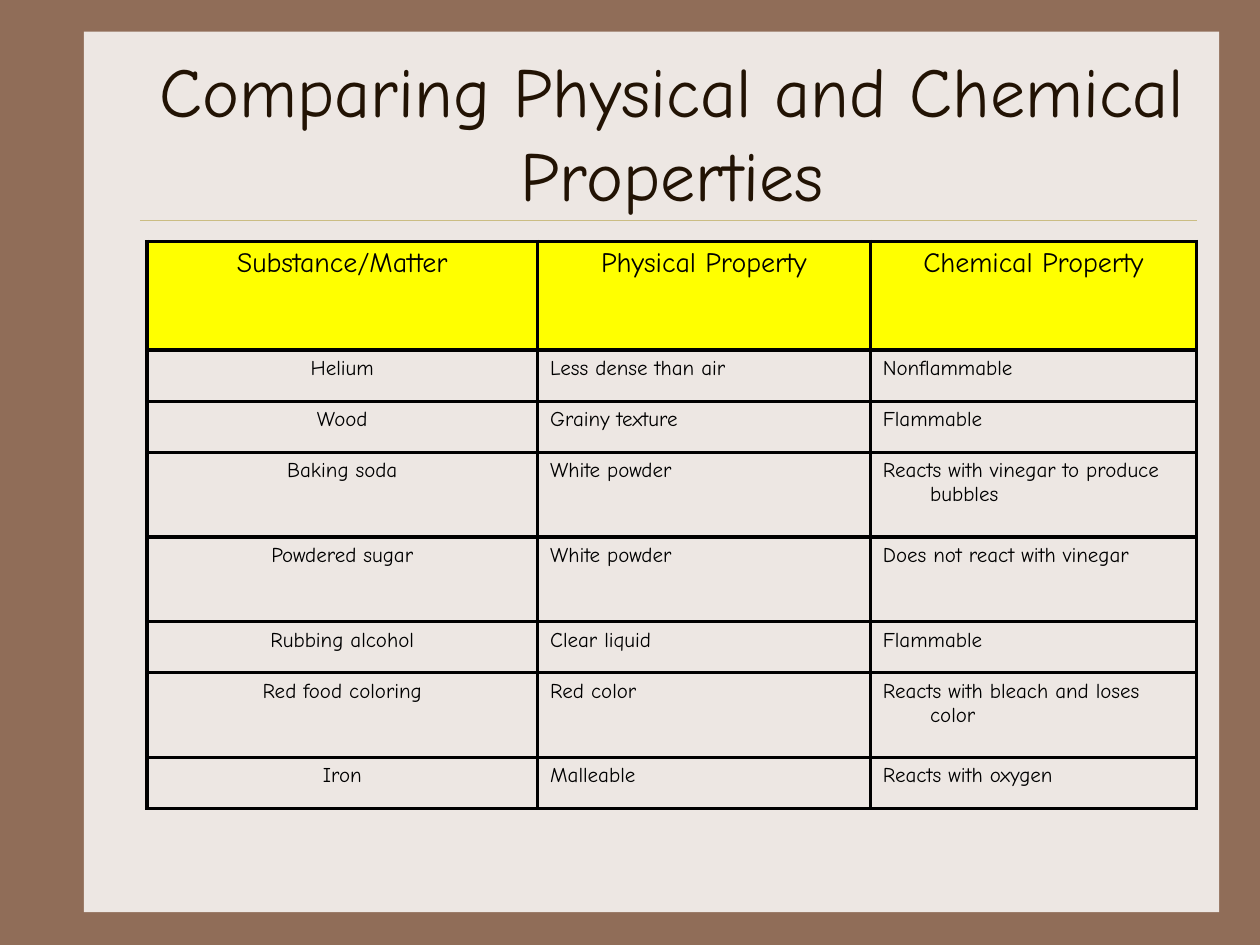
from dataclasses import dataclass

from lxml.etree import SubElement
from pptx import Presentation
from pptx.dml.color import RGBColor
from pptx.enum.shapes import MSO_CONNECTOR, MSO_SHAPE
from pptx.enum.text import MSO_ANCHOR, PP_ALIGN
from pptx.oxml.ns import qn
from pptx.slide import Slide
from pptx.util import Pt

COLORS = {
    "frame": "906D58",
    "paper": "EDE7E3",
    "rule": "CBBD83",
    "title": "221304",
    "ink": "000000",
    "header": "FFFF00",
}
COLUMN_WIDTHS = [223.2, 190.1, 186.5]
ROW_HEIGHTS = [62, 29.2, 29.2, 48.5, 48.5, 29.2, 48.5, 29.2]
PROPERTIES = [
    ("Substance/Matter", "Physical Property", "Chemical Property"),
    ("Helium", "Less dense than air", "Nonflammable"),
    ("Wood", "Grainy texture", "Flammable"),
    ("Baking soda", "White powder", "Reacts with vinegar to produce bubbles"),
    ("Powdered sugar", "White powder", "Does not react with vinegar"),
    ("Rubbing alcohol", "Clear liquid", "Flammable"),
    ("Red food coloring", "Red color", "Reacts with bleach and loses color"),
    ("Iron", "Malleable", "Reacts with oxygen"),
]


def write_text(text_frame, text, *, font, size, color, align=PP_ALIGN.LEFT, hanging=0):
    paragraph = text_frame.paragraphs[0]
    paragraph.alignment = align
    if hanging:
        properties = paragraph._p.get_or_add_pPr()
        properties.set("marL", str(Pt(hanging)))
        properties.set("indent", str(-Pt(hanging)))
    run = paragraph.add_run()
    run.text = text
    run.font.name = font
    run.font.size = Pt(size)
    run.font.color.rgb = RGBColor.from_string(color)


def add_borders(cell, color, width):
    properties = cell._tc.get_or_add_tcPr()
    for position, side in enumerate(("a:lnL", "a:lnR", "a:lnT", "a:lnB")):
        line = SubElement(properties, qn(side), w=str(Pt(width)))
        fill = SubElement(line, qn("a:solidFill"))
        SubElement(fill, qn("a:srgbClr"), val=color)
        properties.insert(position, line)


@dataclass
class SlideBuilder:
    slide: Slide
    font: str = "Comic Neue"
    title_size: float = 40
    header_size: float = 16
    body_size: float = 12
    hanging: float = 27
    border_width: float = 2

    def background(self, color):
        fill = self.slide.background.fill
        fill.solid()
        fill.fore_color.rgb = RGBColor.from_string(color)

    def panel(self, left, top, width, height, color):
        shape = self.slide.shapes.add_shape(
            MSO_SHAPE.RECTANGLE, Pt(left), Pt(top), Pt(width), Pt(height)
        )
        shape.shadow.inherit = False
        shape.fill.solid()
        shape.fill.fore_color.rgb = RGBColor.from_string(color)
        shape.line.fill.background()

    def rule(self, left, right, top, color):
        connector = self.slide.shapes.add_connector(
            MSO_CONNECTOR.STRAIGHT, Pt(left), Pt(top), Pt(right), Pt(top)
        )
        connector.line.color.rgb = RGBColor.from_string(color)
        connector.line.width = Pt(0.25)
        SubElement(connector._element.spPr, qn("a:effectLst"))

    def title(self, left, top, width, height, text):
        shape = self.slide.shapes.add_textbox(Pt(left), Pt(top), Pt(width), Pt(height))
        text_frame = shape.text_frame
        text_frame.word_wrap = True
        text_frame.vertical_anchor = MSO_ANCHOR.MIDDLE
        write_text(text_frame, text, font=self.font, size=self.title_size,
                   color=COLORS["title"], align=PP_ALIGN.CENTER)

    def table(self, left, top, widths, heights, rows):
        table = self.slide.shapes.add_table(
            len(rows), len(widths), Pt(left), Pt(top), Pt(sum(widths)), Pt(sum(heights))
        ).table
        table.first_row = False
        table.horz_banding = False
        for column, width in zip(table.columns, widths):
            column.width = Pt(width)
        for row, height in zip(table.rows, heights):
            row.height = Pt(height)
        for row_index, texts in enumerate(rows):
            for column_index, text in enumerate(texts):
                self.cell(table.cell(row_index, column_index), text,
                          is_header=row_index == 0, is_first=column_index == 0)

    def cell(self, cell, text, is_header, is_first):
        if is_header:
            cell.fill.solid()
            cell.fill.fore_color.rgb = RGBColor.from_string(COLORS["header"])
        else:
            cell.fill.background()
        add_borders(cell, COLORS["ink"], self.border_width)
        write_text(
            cell.text_frame, text, font=self.font, color=COLORS["ink"],
            size=self.header_size if is_header else self.body_size,
            align=PP_ALIGN.CENTER if is_header or is_first else PP_ALIGN.LEFT,
            hanging=self.hanging,
        )


def main():
    presentation = Presentation()
    presentation.slide_width = Pt(720)
    presentation.slide_height = Pt(540)
    builder = SlideBuilder(presentation.slides.add_slide(presentation.slide_layouts[6]))
    builder.background(COLORS["frame"])
    builder.panel(48, 18, 648.7, 503.3, COLORS["paper"])
    builder.rule(80, 684, 126, COLORS["rule"])
    builder.title(84, 30, 600, 90, "Comparing Physical and Chemical Properties")
    builder.table(84, 138, COLUMN_WIDTHS, ROW_HEIGHTS, PROPERTIES)
    presentation.save("out.pptx")


if __name__ == "__main__":
    main()
